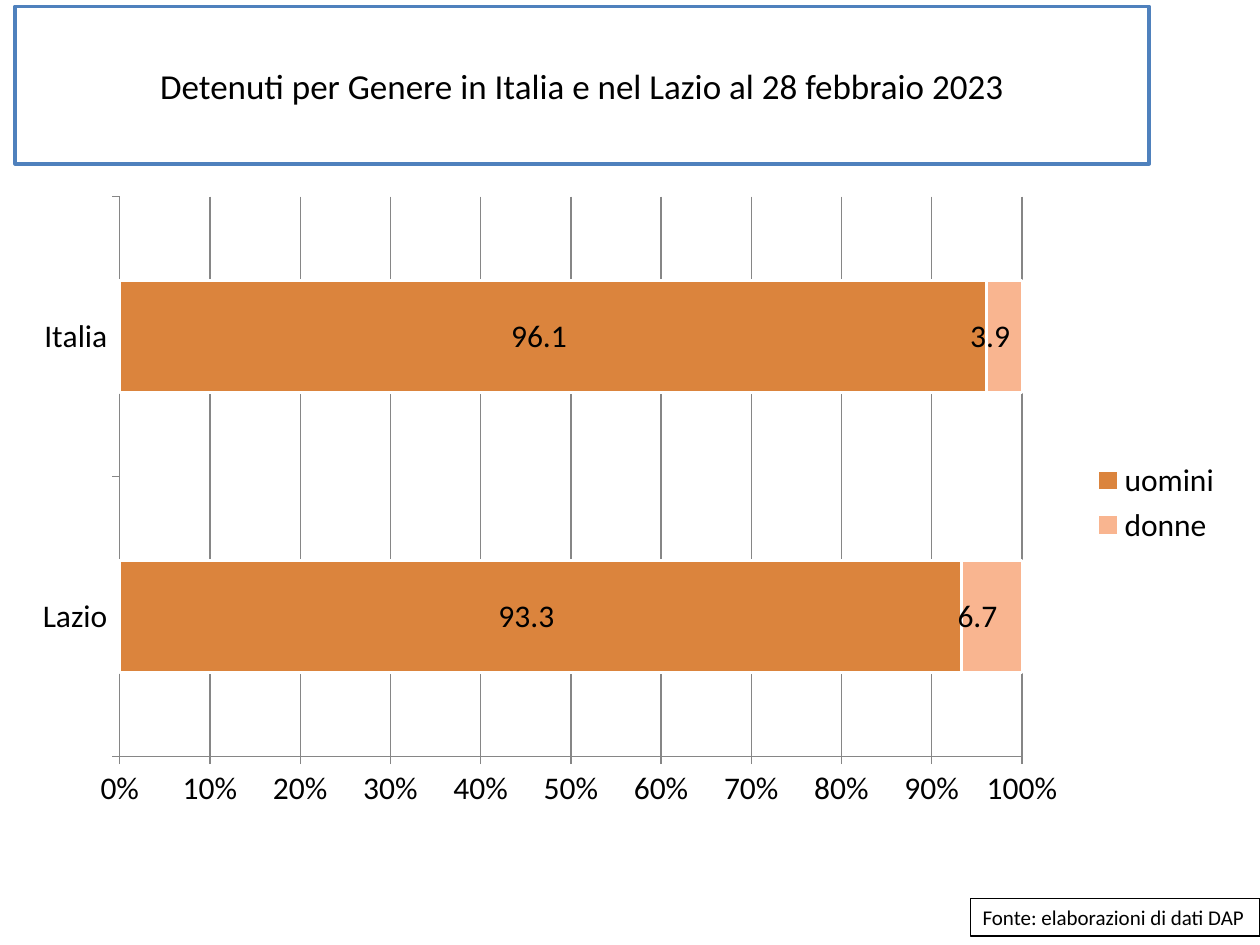
"""Slide with the share of detained men and women in Italia and Lazio."""
from lxml.etree import SubElement
from pptx import Presentation
from pptx.chart.data import CategoryChartData
from pptx.dml.color import RGBColor
from pptx.enum.chart import XL_CHART_TYPE, XL_LABEL_POSITION, XL_LEGEND_POSITION, XL_TICK_MARK
from pptx.enum.shapes import MSO_SHAPE
from pptx.enum.text import MSO_ANCHOR, MSO_AUTO_SIZE, PP_ALIGN
from pptx.oxml.ns import qn
from pptx.util import Inches, Pt

TITLE = "Detenuti per Genere in Italia e nel Lazio al 28 febbraio 2023"
SOURCE = "Fonte: elaborazioni di dati DAP"
REGIONS = ["Lazio", "Italia"]
GENDERS = [("uomini", [93.3, 96.1], "men"), ("donne", [6.7, 3.9], "women")]
COLORS = {"men": "DB843D", "women": "F9B590", "frame": "4F81BD",
          "text": "000000", "paper": "FFFFFF", "grid": "868686"}
FONT = "Calibri"
LABEL_FORMAT = "#,##0.0\\ _€_-"
PLOT_SHARES = {"x": 0.083, "y": 0.018, "w": 0.742, "h": 0.882}


def color(name):
    return RGBColor.from_string(COLORS[name])


def style_font(font, size):
    font.name, font.size, font.bold = FONT, Pt(size), False
    font.color.rgb = color("text")


def style_line(line, name, width):
    line.color.rgb = color(name)
    line.width = Pt(width)


def fill_box(box, text, size, border, width, align):
    box.fill.solid()
    box.fill.fore_color.rgb = color("paper")
    style_line(box.line, border, width)
    frame = box.text_frame
    frame.text = text
    frame.vertical_anchor = MSO_ANCHOR.MIDDLE
    frame.paragraphs[0].alignment = align
    style_font(frame.paragraphs[0].runs[0].font, size)


def place_plot(chart):
    plot_area = chart._chartSpace.chart.plotArea
    layout = plot_area.find(qn("c:layout"))
    if layout is None:
        layout = SubElement(plot_area, qn("c:layout"))
        plot_area.insert(0, layout)
    manual = SubElement(layout, qn("c:manualLayout"))
    settings = {"layoutTarget": "inner", "xMode": "edge", "yMode": "edge", **PLOT_SHARES}
    for tag, value in settings.items():
        SubElement(manual, qn(f"c:{tag}")).set("val", str(value))


def add_gender_chart(slide):
    data = CategoryChartData()
    data.categories = REGIONS
    for gender, shares, _ in GENDERS:
        data.add_series(gender, shares)
    chart = slide.shapes.add_chart(
        XL_CHART_TYPE.BAR_STACKED_100, Inches(0.15), Inches(1.47),
        Inches(9.65), Inches(5.04), data).chart
    style_font(chart.font, 18)
    chart.has_title = False
    chart.has_legend = True
    chart.legend.position = XL_LEGEND_POSITION.RIGHT
    chart.legend.include_in_layout = False
    place_plot(chart)

    plot = chart.plots[0]
    plot.gap_width, plot.overlap = 150, 100
    plot.vary_by_categories = False
    for series, (_, _, tone) in zip(plot.series, GENDERS):
        series.format.fill.solid()
        series.format.fill.fore_color.rgb = color(tone)
        style_line(series.format.line, "paper", 1.5)
        labels = series.data_labels
        labels.show_value = True
        labels.position = XL_LABEL_POSITION.CENTER
        labels.number_format = LABEL_FORMAT
        labels.number_format_is_linked = False
        style_font(labels.font, 18)

    for axis in (chart.category_axis, chart.value_axis):
        axis.major_tick_mark = XL_TICK_MARK.OUTSIDE
        axis.minor_tick_mark = XL_TICK_MARK.NONE
        style_line(axis.format.line, "grid", 0.75)
        style_font(axis.tick_labels.font, 18)
    scale = chart.value_axis
    scale.minimum_scale, scale.maximum_scale, scale.major_unit = 0, 1, 0.1
    scale.has_major_gridlines = True
    style_line(scale.major_gridlines.format.line, "grid", 0.75)
    scale.tick_labels.number_format = "0%"
    scale.tick_labels.number_format_is_linked = False


def main():
    deck = Presentation()
    deck.slide_width, deck.slide_height = Inches(10), Inches(7.5)
    slide = deck.slides.add_slide(deck.slide_layouts[5])

    title = slide.shapes.title
    title.left, title.top = Inches(0.12), Inches(0.05)
    title.width, title.height = Inches(9), Inches(1.25)
    fill_box(title, TITLE, 20, "frame", 2, PP_ALIGN.CENTER)

    source = slide.shapes.add_shape(
        MSO_SHAPE.RECTANGLE, Inches(7.7), Inches(7.13), Inches(2.3), Inches(0.3))
    source.shadow.inherit = False
    fill_box(source, SOURCE, 12, "text", 0.75, PP_ALIGN.LEFT)
    source.text_frame.word_wrap = False
    source.text_frame.auto_size = MSO_AUTO_SIZE.SHAPE_TO_FIT_TEXT

    add_gender_chart(slide)
    deck.save("out.pptx")


if __name__ == "__main__":
    main()
